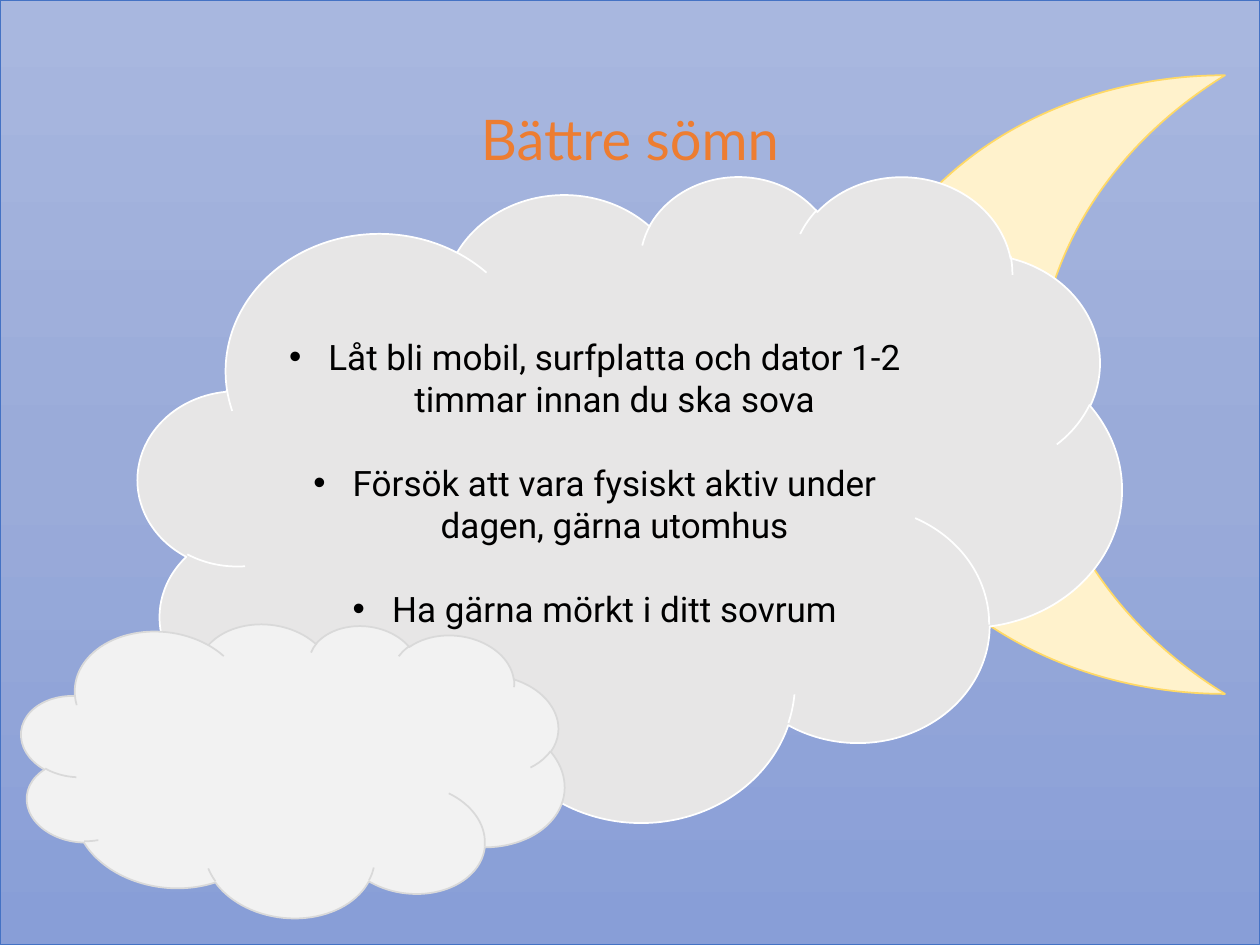
from copy import deepcopy

from lxml import etree
from pptx import Presentation
from pptx.dml.color import RGBColor
from pptx.enum.shapes import MSO_SHAPE
from pptx.enum.text import MSO_ANCHOR, PP_ALIGN
from pptx.oxml.ns import qn
from pptx.util import Pt

RECTANGLE = MSO_SHAPE.RECTANGLE
MOON = MSO_SHAPE.MOON
CLOUD = MSO_SHAPE.CLOUD
CENTER = PP_ALIGN.CENTER
MIDDLE = MSO_ANCHOR.MIDDLE

SKY_STOPS = [
    (0, RGBColor(0xA8, 0xB7, 0xDF)),
    (0.5, RGBColor(0x9A, 0xAB, 0xD9)),
    (1, RGBColor(0x88, 0x9E, 0xD7)),
]
SKY_EDGE = RGBColor(0x44, 0x72, 0xC4)
MOON_FILL = RGBColor(0xFF, 0xF2, 0xCC)
MOON_EDGE = RGBColor(0xFF, 0xD9, 0x66)
CLOUD_FILL = RGBColor(0xE7, 0xE6, 0xE6)
WHITE = RGBColor(0xFF, 0xFF, 0xFF)
SMALL_CLOUD_FILL = RGBColor(0xF2, 0xF2, 0xF2)
SMALL_CLOUD_EDGE = RGBColor(0xD9, 0xD9, 0xD9)
ORANGE = RGBColor(0xED, 0x7D, 0x31)
BLACK = RGBColor(0, 0, 0)

TITLE_FORMAT = {"name": "Lato", "size": Pt(32)}
ADVICE_FORMAT = {"name": "Roboto", "size": Pt(20)}
ADVICE = [
    "Låt bli mobil, surfplatta och dator 1-2 timmar innan du ska sova",
    "Försök att vara fysiskt aktiv under dagen, gärna utomhus",
    "Ha gärna mörkt i ditt sovrum",
]


class SlideBuilder:
    bullet_indent = Pt(22.5)
    advice_gap = Pt(24)

    def __init__(self, slide):
        self.slide = slide

    def format_font(self, font, values, color):
        for name, value in values.items():
            setattr(font, name, value)
        font.color.rgb = color

    def add_shape(self, kind, box, edge, fill=None, width=1, rotation=0):
        shape = self.slide.shapes.add_shape(kind, *map(Pt, box))
        shape.shadow.inherit = False
        shape.rotation = rotation
        shape.line.color.rgb = edge
        shape.line.width = Pt(width)
        if fill is not None:
            shape.fill.solid()
            shape.fill.fore_color.rgb = fill
        return shape

    def add_sky(self, box):
        sky = self.add_shape(RECTANGLE, box, SKY_EDGE, width=0.5)
        sky.fill.gradient()
        sky.fill.gradient_angle = 270
        stop_list = sky.element.find(".//" + qn("a:gsLst"))
        stop_list.insert(1, deepcopy(stop_list[0]))
        for stop, (position, color) in zip(sky.fill.gradient_stops, SKY_STOPS):
            stop.position = position
            stop.color.rgb = color

    def add_bullets(self, shape, texts):
        frame = shape.text_frame
        frame.word_wrap = True
        frame.vertical_anchor = MIDDLE
        for index, text in enumerate(texts):
            paragraph = frame.add_paragraph() if index else frame.paragraphs[0]
            paragraph.text = text
            paragraph.alignment = CENTER
            if index:
                paragraph.space_before = self.advice_gap
            self.format_font(paragraph.runs[0].font, ADVICE_FORMAT, BLACK)
            properties = paragraph._p.get_or_add_pPr()
            properties.set("marL", str(self.bullet_indent))
            properties.set("indent", str(-self.bullet_indent))
            etree.SubElement(properties, qn("a:buFont"), typeface="Arial")
            etree.SubElement(properties, qn("a:buChar"), char="•")

    def add_title(self, text, box):
        title = self.slide.shapes.title
        title.left, title.top, title.width, title.height = map(Pt, box)
        title.text_frame.text = text
        title.text_frame.vertical_anchor = MIDDLE
        paragraph = title.text_frame.paragraphs[0]
        paragraph.alignment = CENTER
        paragraph.line_spacing = 0.9
        self.format_font(paragraph.runs[0].font, TITLE_FORMAT, ORANGE)
        title.element.getparent().append(title.element)


def main():
    presentation = Presentation()
    presentation.slide_width = Pt(720)
    presentation.slide_height = Pt(540)
    slide = presentation.slides.add_slide(presentation.slide_layouts[5])
    builder = SlideBuilder(slide)
    builder.add_sky((0, 0, 720, 540))
    builder.add_shape(MOON, (485.5, 43, 214.5, 353.5), MOON_EDGE, MOON_FILL)
    cloud = builder.add_shape(CLOUD, (79, 100, 562, 369), WHITE, CLOUD_FILL)
    builder.add_bullets(cloud, ADVICE)
    builder.add_title("Bättre sömn", (49.5, 29, 621, 104.5))
    builder.add_shape(
        CLOUD, (11, 353.5, 312, 170.5), SMALL_CLOUD_EDGE, SMALL_CLOUD_FILL, rotation=5.9
    )
    presentation.save("out.pptx")


if __name__ == "__main__":
    main()
